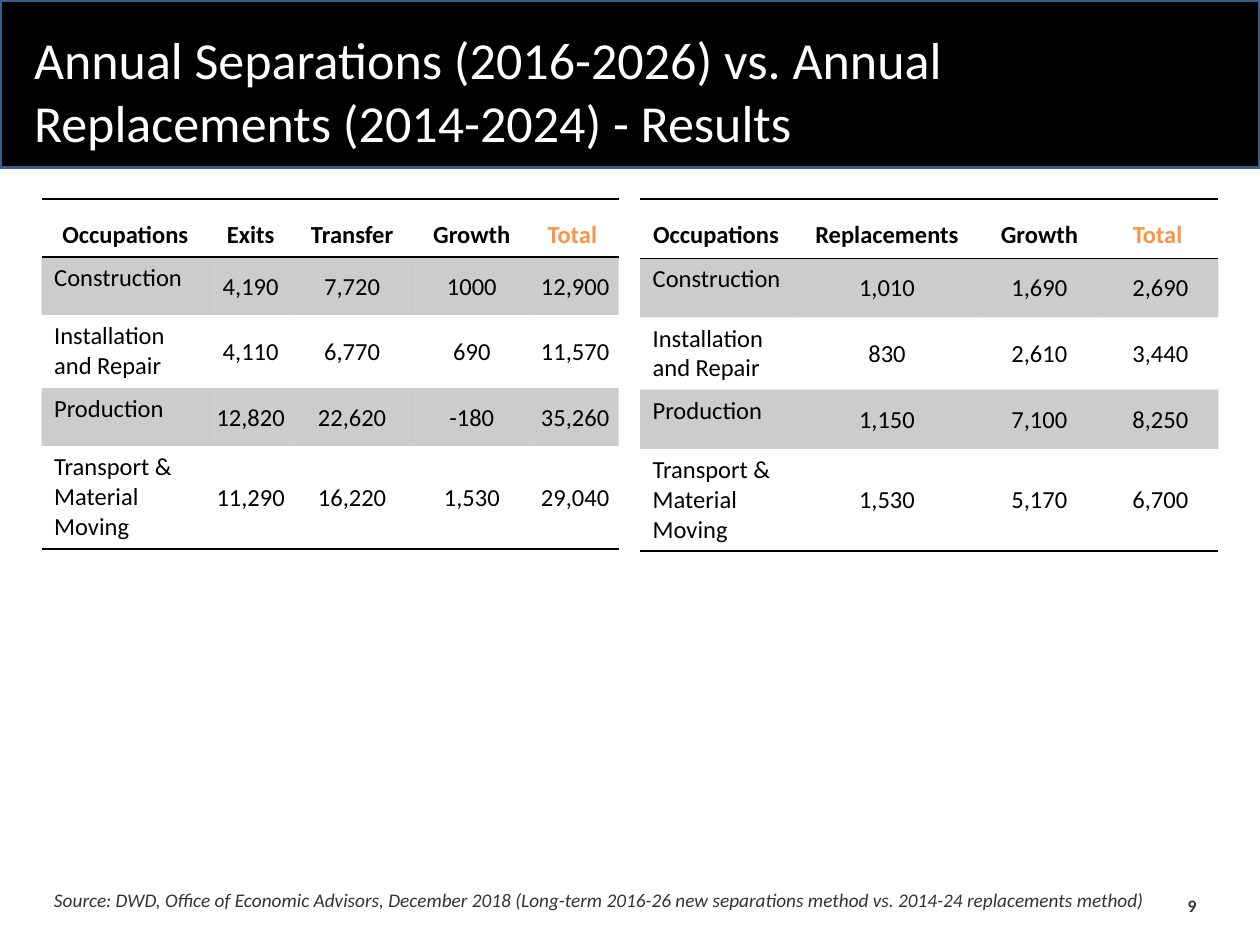
"""Build a slide comparing annual separations with annual replacements by occupation."""
from lxml import etree
from pptx import Presentation
from pptx.dml.color import RGBColor
from pptx.enum.shapes import MSO_SHAPE
from pptx.enum.text import MSO_ANCHOR, MSO_AUTO_SIZE, PP_ALIGN
from pptx.oxml.ns import qn
from pptx.util import Inches, Pt

RECT = MSO_SHAPE.RECTANGLE
TOP, MID = MSO_ANCHOR.TOP, MSO_ANCHOR.MIDDLE
LEFT, MIDST = PP_ALIGN.LEFT, PP_ALIGN.CENTER
FIXED = MSO_AUTO_SIZE.NONE
PLAIN = "{2D5ABB26-0587-4C30-8999-92F81FD0307C}"
HUES = {"black": "000000", "white": "FFFFFF", "blue": "3A5F8C",
        "orange": "F79646", "gray": "333333"}


def style(para, hue, align=LEFT, **form):
    para.alignment = align
    para.font.name = "Calibri"
    para.font.color.rgb = RGBColor.from_string(HUES[hue])
    for key, value in form.items():
        setattr(para.font, key, value)


def rule(cell, side):
    line = etree.SubElement(cell._tc.get_or_add_tcPr(), qn(f"a:{side}"), w=str(Pt(1)))
    fill = etree.SubElement(line, qn("a:solidFill"))
    etree.SubElement(fill, qn("a:srgbClr"), val=HUES["black"])


deck = Presentation()
deck.slide_width, deck.slide_height = Inches(10), Inches(7.5)
slide = deck.slides.add_slide(deck.slide_layouts[5])
shapes = slide.shapes

bar = shapes.add_shape(RECT, 0, 0, Inches(10), Inches(1.33))
bar.shadow.inherit = False
bar.fill.solid()
bar.fill.fore_color.rgb = RGBColor.from_string(HUES["black"])
bar.line.color.rgb = RGBColor.from_string(HUES["blue"])
bar.line.width = Pt(2)
shapes._spTree.insert(2, bar._element)

title = shapes.title
title.left, title.top = Inches(0.17), Inches(0.17)
title.width, title.height = Inches(7.92), Inches(0.83)
frame = title.text_frame
frame.text = "Annual Separations (2016-2026) vs. Annual Replacements (2014-2024) - Results"
frame.auto_size, frame.vertical_anchor, frame.word_wrap = FIXED, TOP, True
style(frame.paragraphs[0], "white", size=Pt(29.7))

jobs = ["Construction", "Installation and Repair", "Production",
        "Transport & Material Moving"]
tables = [
    (0.33, [1.33, 0.66, 0.95, 0.95, 0.69], [0.46, 0.46, 0.58, 0.46, 0.82],
     ["Occupations", "Exits", "Transfer", "Growth", "Total "],
     [["4,190", "7,720", "1000", "12,900"],
      ["4,110", "6,770", "690", "11,570"],
      ["12,820", "22,620", "-180", "35,260"],
      ["11,290", "16,220", "1,530", "29,040"]]),
    (5.08, [1.25, 1.42, 1, 0.92], [0.47, 0.47, 0.54, 0.47, 0.76],
     ["Occupations ", "Replacements", "Growth", "Total "],
     [["1,010", "1,690", "2,690"],
      ["830", "2,610", "3,440"],
      ["1,150", "7,100", "8,250"],
      ["1,530", "5,170", "6,700"]]),
]
for left, widths, heights, heads, counts in tables:
    rows = [heads] + [[job] + nums for job, nums in zip(jobs, counts)]
    table = shapes.add_table(len(rows), len(heads), Inches(left), Inches(1.58),
                             Inches(4.58), Inches(2.78)).table
    table._tbl.tblPr.find(qn("a:tableStyleId")).text = PLAIN
    table.first_row = table.horz_banding = False
    for col, width in zip(table.columns, widths):
        col.width = Inches(width)
    for row, height in zip(table.rows, heights):
        row.height = Inches(height)
    for r, row in enumerate(rows):
        for c, text in enumerate(row):
            cell = table.cell(r, c)
            cell.text = text
            para = cell.text_frame.paragraphs[0]
            head, last = r == 0, r == len(rows) - 1
            hue = "orange" if head and c == len(row) - 1 else "black"
            style(para, hue, MIDST if head or c else LEFT, size=Pt(14), bold=head)
            if head:
                para.line_spacing = 1.5
                rule(cell, "lnT")
            elif c:
                cell.vertical_anchor = MID
                cell.margin_left = cell.margin_right = cell.margin_top = Inches(0.01)
                cell.margin_bottom = 0
            if head or last:
                rule(cell, "lnB")
            if r % 2:
                cell.fill.solid()
                cell.fill.fore_color.rgb = RGBColor.from_string(HUES["black"])
                tint = cell._tc.tcPr.find(f"{qn('a:solidFill')}/{qn('a:srgbClr')}")
                etree.SubElement(tint, qn("a:alpha"), val="20000")
            else:
                cell.fill.background()

notes = [
    ("9", 9.25, 0.42, 0.42, MIDST, {"size": Pt(10), "bold": True}),
    ("Source: DWD, Office of Economic Advisors, December 2018 "
     "(Long-term 2016-26 new separations method vs. 2014-24 replacements method)",
     0.33, 8.91, 0.33, LEFT, {"size": Pt(11), "italic": True}),
]
for text, left, width, height, align, form in notes:
    box = shapes.add_textbox(Inches(left), Inches(6.98), Inches(width), Inches(height))
    frame = box.text_frame
    frame.text = text
    frame.word_wrap, frame.vertical_anchor = False, MID
    style(frame.paragraphs[0], "gray", align, **form)

deck.save("out.pptx")
